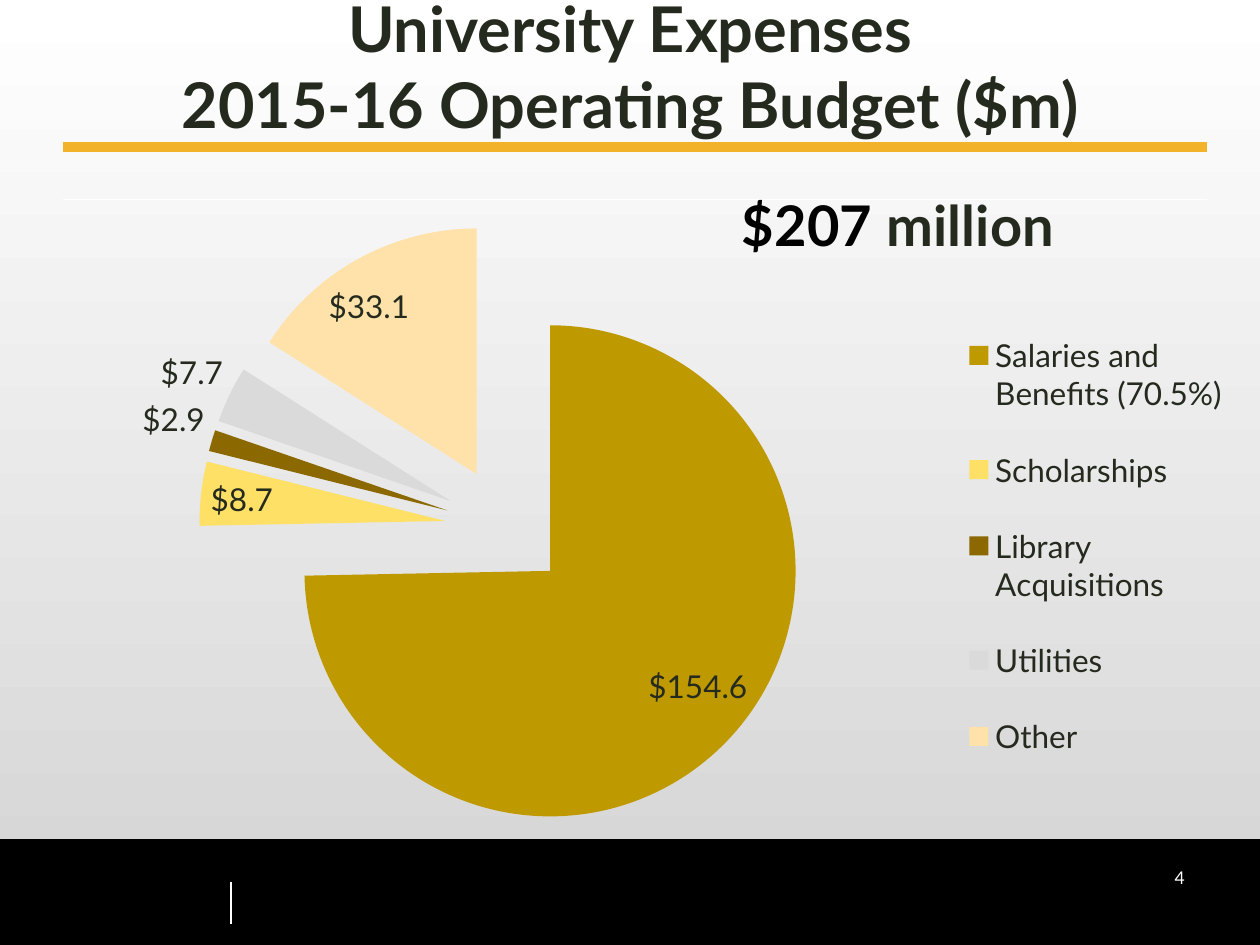
"""Build a slide with an exploded pie chart of university expenses."""
from lxml import etree
from pptx import Presentation
from pptx.chart.data import CategoryChartData
from pptx.dml.color import RGBColor
from pptx.enum.chart import XL_CHART_TYPE, XL_LABEL_POSITION, XL_LEGEND_POSITION
from pptx.enum.shapes import MSO_CONNECTOR, MSO_SHAPE
from pptx.enum.text import MSO_ANCHOR, PP_ALIGN
from pptx.oxml.ns import qn
from pptx.util import Pt

PIE = XL_CHART_TYPE.PIE
BEST_FIT = XL_LABEL_POSITION.BEST_FIT
RIGHT_LEGEND = XL_LEGEND_POSITION.RIGHT
STRAIGHT = MSO_CONNECTOR.STRAIGHT
RECT = MSO_SHAPE.RECTANGLE
TOP, BOTTOM = MSO_ANCHOR.TOP, MSO_ANCHOR.BOTTOM
CENTER, RIGHT = PP_ALIGN.CENTER, PP_ALIGN.RIGHT

FONT = "Lato"
COLORS = {"white": "FFFFFF", "shade": "D3D3D3", "black": "000000",
          "text": "252A1E", "rule": "F2B32A"}

TITLE = ["University Expenses", "2015-16 Operating Budget ($m)"]
PAGE = "4"
TOTAL = [("$207 ", "black"), ("million", "text")]
EXPENSES = [
    ("Salaries and Benefits (70.5%)", 154.6, "BF9900"),
    ("Scholarships", 8.7, "FFE066"),
    ("Library Acquisitions", 2.9, "8B6800"),
    ("Utilities", 7.7, "DADADA"),
    ("Other", 33.1, "FFE2AA"),
]
RULES = [
    ((132, 504), (132, 528), "white", 0.75),
    ((36, 114), (690, 114), "white", 0.75),
    ((36, 84), (690, 84), "rule", 6),
]
EXPLOSION = 25
CHART_BOX = (-42, 96, 786, 480)
PLOT_LAYOUT = {"layoutTarget": "inner", "xMode": "edge", "yMode": "edge",
               "x": 0.114, "y": 0.063, "w": 0.615, "h": 0.731}
TITLE_LAYOUT = {"xMode": "edge", "yMode": "edge", "x": 0.59, "y": 0.02}
LEGEND_LAYOUT = {"xMode": "edge", "yMode": "edge",
                 "x": 0.75, "y": 0.155, "w": 0.2, "h": 0.59}


def rgb(name):
    return RGBColor.from_string(COLORS.get(name, name))


def style(font, size, color, bold=False):
    font.name, font.size, font.bold = FONT, Pt(size), bold
    font.color.rgb = rgb(color)


def add_text(slide, box, lines, size, color, align, anchor, bold=False):
    tf = slide.shapes.add_textbox(*map(Pt, box)).text_frame
    tf.word_wrap = True
    tf.vertical_anchor = anchor
    p = tf.paragraphs[0]
    p.alignment = align
    for i, line in enumerate(lines):
        if i:
            p.add_line_break()
        r = p.add_run()
        r.text = line
        style(r.font, size, color, bold)
    style(p.font, size, color, bold)


def add_rule(slide, start, end, color, width):
    line = slide.shapes.add_connector(STRAIGHT, *map(Pt, start + end))
    line.line.color.rgb = rgb(color)
    line.line.width = Pt(width)
    etree.SubElement(line._element.spPr, qn("a:effectLst"))


def set_layout(parent, index, values):
    for old in parent.findall(qn("c:layout")):
        parent.remove(old)
    layout = etree.Element(qn("c:layout"))
    manual = etree.SubElement(layout, qn("c:manualLayout"))
    for key, value in values.items():
        etree.SubElement(manual, qn("c:" + key)).set("val", str(value))
    parent.insert(index, layout)


def add_pie(slide):
    data = CategoryChartData()
    data.categories = [name for name, _, _ in EXPENSES]
    data.add_series("Series 1", [value for _, value, _ in EXPENSES])
    chart = slide.shapes.add_chart(PIE, *map(Pt, CHART_BOX), data).chart
    style(chart.font, 18, "white")

    p = chart.chart_title.text_frame.paragraphs[0]
    for text, color in TOTAL:
        r = p.add_run()
        r.text = text
        style(r.font, 32, color, True)

    chart.has_legend = True
    chart.legend.position = RIGHT_LEGEND
    chart.legend.include_in_layout = False
    style(chart.legend.font, 18, "text")

    plot = chart.plots[0]
    plot.vary_by_categories = True
    series = plot.series[0]
    for i, (_, _, color) in enumerate(EXPENSES):
        fill = series.points[i].format.fill
        fill.solid()
        fill.fore_color.rgb = rgb(color)
    explosion = etree.Element(qn("c:explosion"), val=str(EXPLOSION))
    series._element.find(qn("c:dPt")).addprevious(explosion)

    labels = series.data_labels
    labels.show_value = True
    labels.position = BEST_FIT
    labels.number_format = '"$"#,##0.0'
    labels.number_format_is_linked = False
    style(labels.font, 18, "text")

    root = chart._chartSpace.chart
    set_layout(root.find(qn("c:plotArea")), 0, PLOT_LAYOUT)
    set_layout(root.find(qn("c:title")), 1, TITLE_LAYOUT)
    set_layout(root.find(qn("c:legend")), 1, LEGEND_LAYOUT)


def main():
    prs = Presentation()
    prs.slide_width, prs.slide_height = Pt(720), Pt(540)
    s = prs.slides.add_slide(prs.slide_layouts[6])
    fill = s.background.fill
    fill.gradient()
    fill.gradient_angle = 270
    for stop, color, position in zip(fill.gradient_stops, ("white", "shade"), (0, 1)):
        stop.color.rgb = rgb(color)
        stop.position = position

    footer = s.shapes.add_shape(RECT, Pt(0), Pt(480), Pt(720), Pt(60))
    footer.shadow.inherit = False
    footer.fill.solid()
    footer.fill.fore_color.rgb = rgb("black")
    footer.line.color.rgb = rgb("black")
    footer.line.width = Pt(0.75)

    for rule in RULES:
        add_rule(s, *rule)
    add_text(s, (0, 30, 720, 54), TITLE, 36, "text", CENTER, BOTTOM, True)
    add_text(s, (516, 492, 168, 36), [PAGE], 10, "white", RIGHT, TOP)
    add_pie(s)
    prs.save("out.pptx")


if __name__ == "__main__":
    main()
